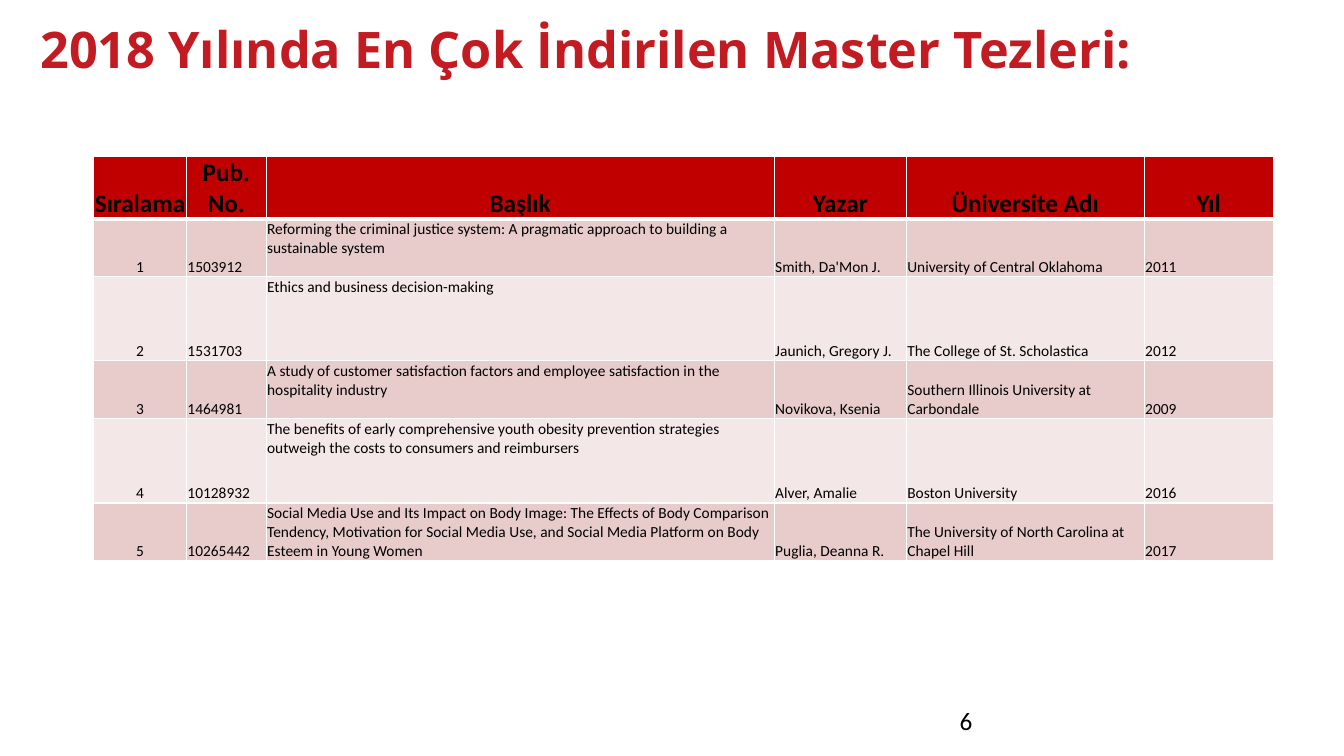
"""Build a slide that ranks the most downloaded master's theses of 2018."""
import dataclasses

import pptx
import pptx.dml.color
import pptx.enum.text
import pptx.oxml
import pptx.oxml.ns
import pptx.util

PX = 9144
INK = {"title": "C21C22", "text": "000000", "head": "C00000",
       "odd": "E8CCCC", "even": "F4E7E7", "line": "FFFFFF"}
ALIGN = pptx.enum.text.PP_ALIGN
ANCHOR = pptx.enum.text.MSO_ANCHOR


@dataclasses.dataclass(frozen=True)
class Column:
    """A table column: heading, width in px, and body alignment."""
    head: str
    width: int
    align: ALIGN = ALIGN.LEFT
    anchor: ANCHOR = ANCHOR.BOTTOM


@dataclasses.dataclass(frozen=True)
class Thesis:
    """A thesis and the height of its row in px."""
    number: str
    title: str
    author: str
    school: str
    year: str
    height: int


COLUMNS = (
    Column("Sıralama", 92, ALIGN.CENTER),
    Column("Pub. No.", 79),
    Column("Başlık", 504, anchor=ANCHOR.TOP),
    Column("Yazar", 131),
    Column("Üniversite Adı", 236),
    Column("Yıl", 128),
)
THESES = (
    Thesis("1503912", "Reforming the criminal justice system: A pragmatic approach "
           "to building a sustainable system",
           "Smith, Da'Mon J.", "University of Central Oklahoma", "2011", 57),
    Thesis("1531703", "Ethics and business decision-making",
           "Jaunich, Gregory J.", "The College of St. Scholastica", "2012", 84),
    Thesis("1464981", "A study of customer satisfaction factors and employee "
           "satisfaction in the hospitality industry",
           "Novikova, Ksenia", "Southern Illinois University at Carbondale", "2009", 57),
    Thesis("10128932", "The benefits of early comprehensive youth obesity prevention "
           "strategies outweigh the costs to consumers and reimbursers",
           "Alver, Amalie", "Boston University", "2016", 84),
    Thesis("10265442", "Social Media Use and Its Impact on Body Image: The Effects of "
           "Body Comparison Tendency, Motivation for Social Media Use, and Social "
           "Media Platform on Body Esteem in Young Women",
           "Puglia, Deanna R.", "The University of North Carolina at Chapel Hill",
           "2017", 57),
)
HEAD = 61


def px(*values: int) -> list[int]:
    """Turn px into EMU."""
    return [value * PX for value in values]


def write(frame, text: str, size: int, ink: str = "text", bold: bool = False,
          face: str = "Calibri", align: ALIGN = ALIGN.LEFT) -> None:
    """Set the text of a frame and format its run."""
    frame.text = text
    line = frame.paragraphs[0]
    line.alignment = align
    font = line.runs[0].font
    font.name, font.size, font.bold = face, pptx.util.Pt(size), bold
    font.color.rgb = pptx.dml.color.RGBColor.from_string(INK[ink])


def border(cell, base: int, top: int) -> None:
    """Draw the four edges of a cell, with top and base widths in points."""
    props = cell._tc.get_or_add_tcPr()
    for side, width in (("L", 1), ("R", 1), ("T", top), ("B", base)):
        props.append(pptx.oxml.parse_xml(
            f'<a:ln{side} {pptx.oxml.ns.nsdecls("a")} w="{pptx.util.Pt(width)}">'
            f'<a:solidFill><a:srgbClr val="{INK["line"]}"/></a:solidFill></a:ln{side}>'))


def paint(cell, text: str, column: Column, row: int) -> None:
    """Fill one cell in the style of its row and column."""
    head = row == 0
    side = 0 if head else 1
    border(cell, base=3 if head else 1, top=3 if row == 1 else 1)
    cell.fill.solid()
    tone = "head" if head else "odd" if row % 2 else "even"
    cell.fill.fore_color.rgb = pptx.dml.color.RGBColor.from_string(INK[tone])
    cell.margin_left, cell.margin_right, cell.margin_top, cell.margin_bottom = px(side, side, 1, 0)
    cell.vertical_anchor = ANCHOR.BOTTOM if head else column.anchor
    write(cell.text_frame, text, 18 if head else 11, bold=head,
          align=ALIGN.CENTER if head else column.align)


def rank(slide) -> None:
    """Add the table of theses."""
    heights = [HEAD] + [item.height for item in THESES]
    width = sum(column.width for column in COLUMNS)
    table = slide.shapes.add_table(len(heights), len(COLUMNS),
                                   *px(93, 155, width, sum(heights))).table
    table.horz_banding = False
    for slot, column in zip(table.columns, COLUMNS):
        slot.width = column.width * PX
    for slot, height in zip(table.rows, heights):
        slot.height = height * PX
    rows = [[column.head for column in COLUMNS]]
    rows += [[str(place), item.number, item.title, item.author, item.school, item.year]
             for place, item in enumerate(THESES, 1)]
    for row, texts in enumerate(rows):
        for col, text in enumerate(texts):
            paint(table.cell(row, col), text, COLUMNS[col], row)


def main() -> None:
    """Build and save the slide."""
    deck = pptx.Presentation()
    deck.slide_width, deck.slide_height = px(1333, 750)
    slide = deck.slides.add_slide(deck.slide_layouts[5])

    title = slide.shapes.title
    title.left, title.top, title.width, title.height = px(30, 20, 1200, 117)
    frame = title.text_frame
    frame.word_wrap = True
    frame.auto_size = pptx.enum.text.MSO_AUTO_SIZE.NONE
    frame.vertical_anchor = ANCHOR.TOP
    write(frame, "2018 Yılında En Çok İndirilen Master Tezleri:", 36, "title", True, "Open Sans")
    frame.paragraphs[0].line_spacing = 0.9

    rank(slide)

    page = slide.shapes.add_textbox(*px(942, 695, 300, 40)).text_frame
    page.word_wrap = True
    page.vertical_anchor = ANCHOR.MIDDLE
    write(page, "6", 18)
    deck.save("out.pptx")


if __name__ == "__main__":
    main()
